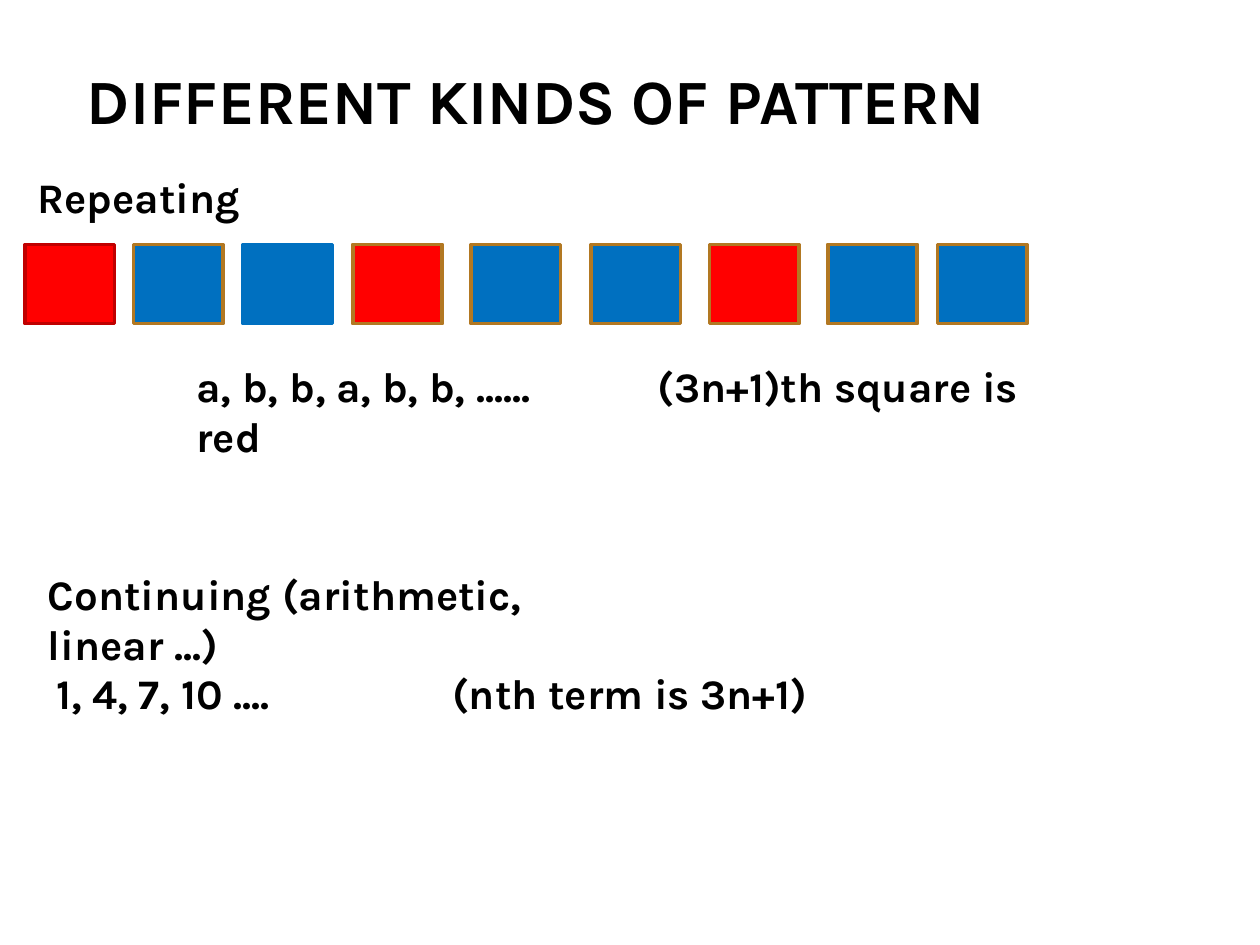
import pptx
import pptx.util
import pptx.dml.color
import pptx.enum.shapes
import pptx.enum.text
import lxml.etree
from dataclasses import dataclass

Inches = pptx.util.Inches
RGB = pptx.dml.color.RGBColor.from_string


@dataclass(frozen=True)
class Theme:
    font: str = "Karla"
    title: int = 36
    body: int = 24
    text: str = "000000"
    red: str = "FF0000"
    dark_red: str = "C00000"
    blue: str = "0070C0"
    brown: str = "B27822"


theme = Theme()


def write(sp, text, size=theme.body, tab=None):
    tf = sp.text_frame
    tf.word_wrap = True
    tf.auto_size = pptx.enum.text.MSO_AUTO_SIZE.NONE
    tf.vertical_anchor = pptx.enum.text.MSO_ANCHOR.TOP
    p = tf.paragraphs[0]
    p.alignment = pptx.enum.text.PP_ALIGN.LEFT
    if tab:
        ns = "{http://schemas.openxmlformats.org/drawingml/2006/main}"
        tabs = lxml.etree.SubElement(p._p.get_or_add_pPr(), ns + "tabLst")
        lxml.etree.SubElement(tabs, ns + "tab", pos=str(Inches(tab)), algn="l")
    r = p.add_run()
    r.text = text
    r.font.name = theme.font
    r.font.size = pptx.util.Pt(size)
    r.font.bold = True
    r.font.color.rgb = RGB(theme.text)


prs = pptx.Presentation()
prs.slide_width, prs.slide_height = Inches(10), Inches(7.5)
s = prs.slides.add_slide(prs.slide_layouts[5])

title = s.shapes.title
title.left, title.top = Inches(0.59), Inches(0.44)
title.width, title.height = Inches(7.4), Inches(0.71)
write(title, "DIFFERENT KINDS OF PATTERN", size=theme.title)

square_lefts = [0.2, 1.06, 1.93, 2.8, 3.74, 4.69, 5.63, 6.57, 7.44]
special_outlines = {0: theme.dark_red, 2: theme.blue}
for i, left in enumerate(square_lefts):
    sp = s.shapes.add_shape(
        pptx.enum.shapes.MSO_SHAPE.RECTANGLE,
        Inches(left), Inches(1.94), Inches(0.71), Inches(0.63))
    sp.shadow.inherit = False
    sp.fill.solid()
    sp.fill.fore_color.rgb = RGB(theme.red if i % 3 == 0 else theme.blue)
    sp.line.color.rgb = RGB(special_outlines.get(i, theme.brown))
    sp.line.width = pptx.util.Pt(2)

labels = [
    ("Repeating", 0.2, 1.31, 2.68, None),
    ("a, b, b, a, b, b, ......\t(3n+1)th square is red", 1.46, 2.81, 7.01, 3.66),
    ("Continuing (arithmetic, linear ...)", 0.28, 4.46, 4.88, None),
    ("1, 4, 7, 10 ....\t(nth term is 3n+1)", 0.35, 5.25, 8.5, 3.14),
]
for text, left, top, width, tab in labels:
    sp = s.shapes.add_textbox(Inches(left), Inches(top), Inches(width), Inches(0.5))
    write(sp, text, tab=tab)

prs.save("out.pptx")
